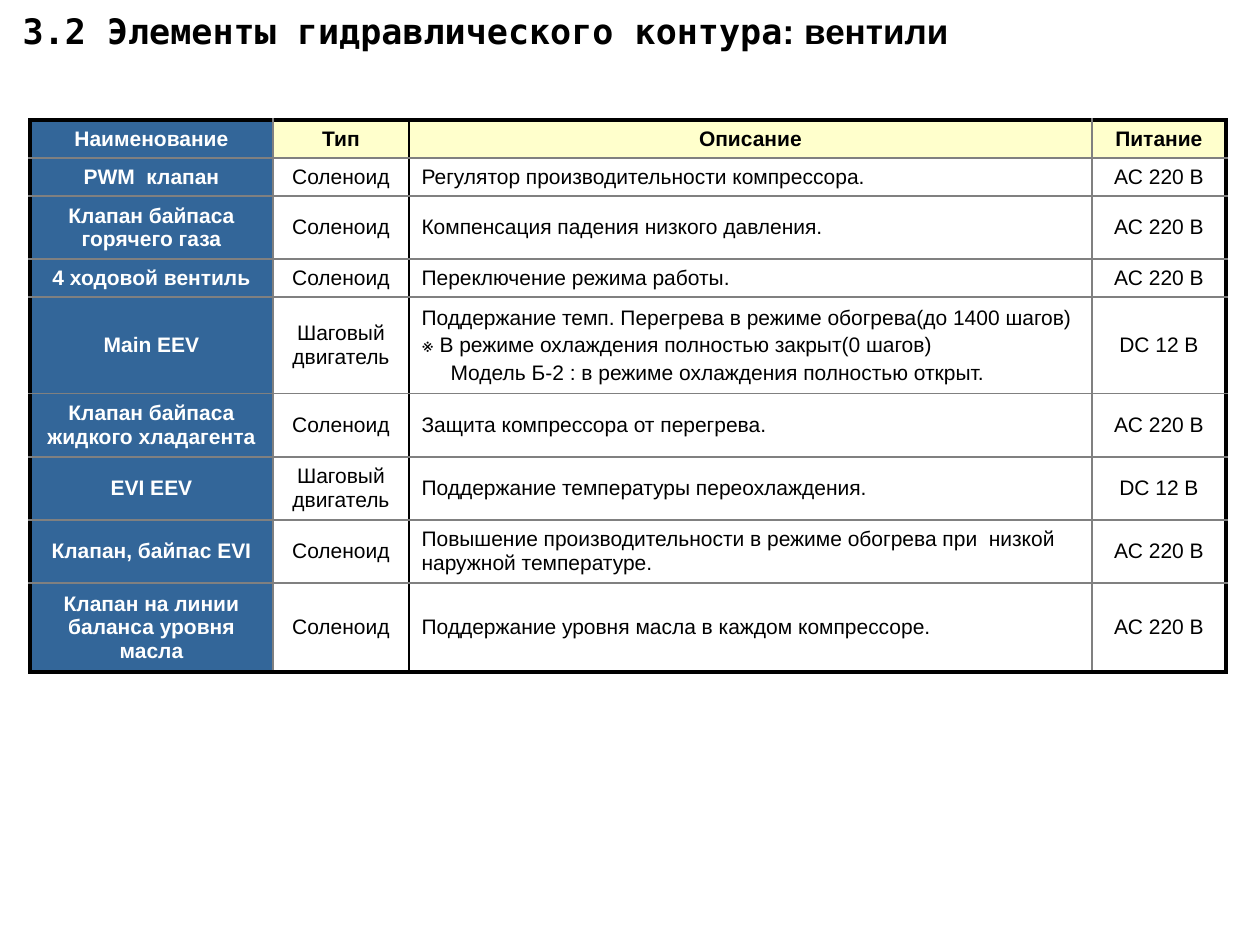
from pptx import Presentation
from pptx.dml.color import RGBColor
from pptx.enum.text import MSO_ANCHOR, MSO_AUTO_SIZE, PP_ALIGN
from pptx.oxml.ns import qn
from pptx.util import Emu, Pt
from lxml import etree

CENTER, LEFT = PP_ALIGN.CENTER, PP_ALIGN.LEFT
TOP, MIDDLE = MSO_ANCHOR.TOP, MSO_ANCHOR.MIDDLE
FIT_SHAPE = MSO_AUTO_SIZE.SHAPE_TO_FIT_TEXT

BLACK = RGBColor(0x00, 0x00, 0x00)
WHITE = RGBColor(0xFF, 0xFF, 0xFF)
GREY = RGBColor(0x80, 0x80, 0x80)
BLUE = RGBColor(0x33, 0x66, 0x99)
CREAM = RGBColor(0xFF, 0xFF, 0xCC)

PX_PER_INCH = 126
FRAME, DIVIDER, HAIRLINE = (BLACK, 2.25), (BLACK, 1), (GREY, 1)

SOLENOID, STEPPER = "Соленоид", "Шаговый двигатель"
AC, DC = "AC 220 В", "DC 12 В"
INDENTED_NOTE = "Модель Б-2 : в режиме охлаждения полностью открыт."

COLUMN_WIDTHS = [243, 136, 683, 134]
DESCRIPTION_COLUMN = 2

# Row height, then the four cells
VALVES = [
    (38, "Наименование", "Тип", "Описание", "Питание"),
    (38, "PWM  клапан", SOLENOID, "Регулятор производительности компрессора.", AC),
    (63, "Клапан байпаса горячего газа", SOLENOID,
     "Компенсация падения низкого давления.", AC),
    (38, "4 ходовой вентиль", SOLENOID, "Переключение режима работы.", AC),
    (96, "Main EEV", STEPPER,
     "Поддержание темп. Перегрева в режиме обогрева(до 1400 шагов)\n"
     "※ В режиме охлаждения полностью закрыт(0 шагов)\n" + INDENTED_NOTE, DC),
    (63, "Клапан байпаса жидкого хладагента", SOLENOID,
     "Защита компрессора от перегрева.", AC),
    (63, "EVI EEV", STEPPER, "Поддержание температуры переохлаждения.", DC),
    (63, "Клапан, байпас EVI", SOLENOID,
     "Повышение производительности в режиме обогрева при  низкой "
     "наружной температуре.", AC),
    (89, "Клапан на линии баланса уровня масла", SOLENOID,
     "Поддержание уровня масла в каждом компрессоре.", AC),
]


def px(length):
    return Emu(round(length * 914400 / PX_PER_INCH))


class SlideBuilder:
    body_font, body_size = "Arial", 12

    def __init__(self, slide):
        self.slide = slide

    def format_run(self, run, size, color, bold, font):
        run.font.size = Pt(size)
        run.font.color.rgb = color
        run.font.bold = bold
        run.font.name = font

    def title(self, x, y, w, h, parts, size):
        title = self.slide.shapes.title
        title.left, title.top, title.width, title.height = map(px, (x, y, w, h))
        frame = title.text_frame
        frame.word_wrap = True
        frame.auto_size = FIT_SHAPE
        frame.vertical_anchor = TOP
        heading = frame.paragraphs[0]
        heading.alignment = LEFT
        heading.line_spacing = 0.6
        for text, font in parts:
            run = heading.add_run()
            run.text = text
            self.format_run(run, size, BLACK, True, font)

    def border(self, cell, side, color, width):
        line = etree.SubElement(cell._tc.get_or_add_tcPr(), qn(f"a:ln{side}"),
                                w=str(Pt(width)))
        fill = etree.SubElement(line, qn("a:solidFill"))
        etree.SubElement(fill, qn("a:srgbClr"), val=str(color))

    def cell(self, cell, text, fill, color, bold, align, borders):
        for side, (line_color, width) in borders.items():
            self.border(cell, side, line_color, width)
        if fill is None:
            cell.fill.background()
        else:
            cell.fill.solid()
            cell.fill.fore_color.rgb = fill
        cell.vertical_anchor = MIDDLE
        cell.text_frame.text = text
        for paragraph in cell.text_frame.paragraphs:
            paragraph.alignment = align
            paragraph.space_before = Pt(0.2 * self.body_size)
            if paragraph.text == INDENTED_NOTE:
                paragraph._p.get_or_add_pPr().set("marL", str(px(29)))
            for run in paragraph.runs:
                self.format_run(run, self.body_size, color, bold, self.body_font)

    def table(self, x, y, widths, rows):
        heights = [row[0] for row in rows]
        table = self.slide.shapes.add_table(
            len(rows), len(widths), px(x), px(y),
            px(sum(widths)), px(sum(heights))).table
        table.first_row = table.horz_banding = False
        for column, width in zip(table.columns, widths):
            column.width = px(width)

        # Lines around the columns and rows, outer ones included
        vertical = [FRAME, HAIRLINE, DIVIDER, HAIRLINE, FRAME]
        horizontal = [FRAME] + [HAIRLINE] * (len(rows) - 1) + [FRAME]

        for r, (height, *texts) in enumerate(rows):
            table.rows[r].height = px(height)
            for c, text in enumerate(texts):
                is_header, is_name = r == 0, c == 0
                fill = BLUE if is_name else CREAM if is_header else None
                is_description = c == DESCRIPTION_COLUMN and not is_header
                self.cell(table.cell(r, c), text, fill,
                          WHITE if is_name else BLACK,
                          is_header or is_name,
                          LEFT if is_description else CENTER,
                          {"L": vertical[c], "R": vertical[c + 1],
                           "T": horizontal[r], "B": horizontal[r + 1]})


def main():
    deck = Presentation()
    deck.slide_width, deck.slide_height = px(1260), px(945)
    builder = SlideBuilder(deck.slides.add_slide(deck.slide_layouts[5]))

    # Valve table
    builder.table(30, 120, COLUMN_WIDTHS, VALVES)

    # Heading
    builder.title(10, 18, 1072, 38,
                  [("3.2 Элементы гидравлического контура", "DejaVu Sans Mono"),
                   (": вентили", "Arial")], 20)

    deck.save("out.pptx")


if __name__ == "__main__":
    main()
